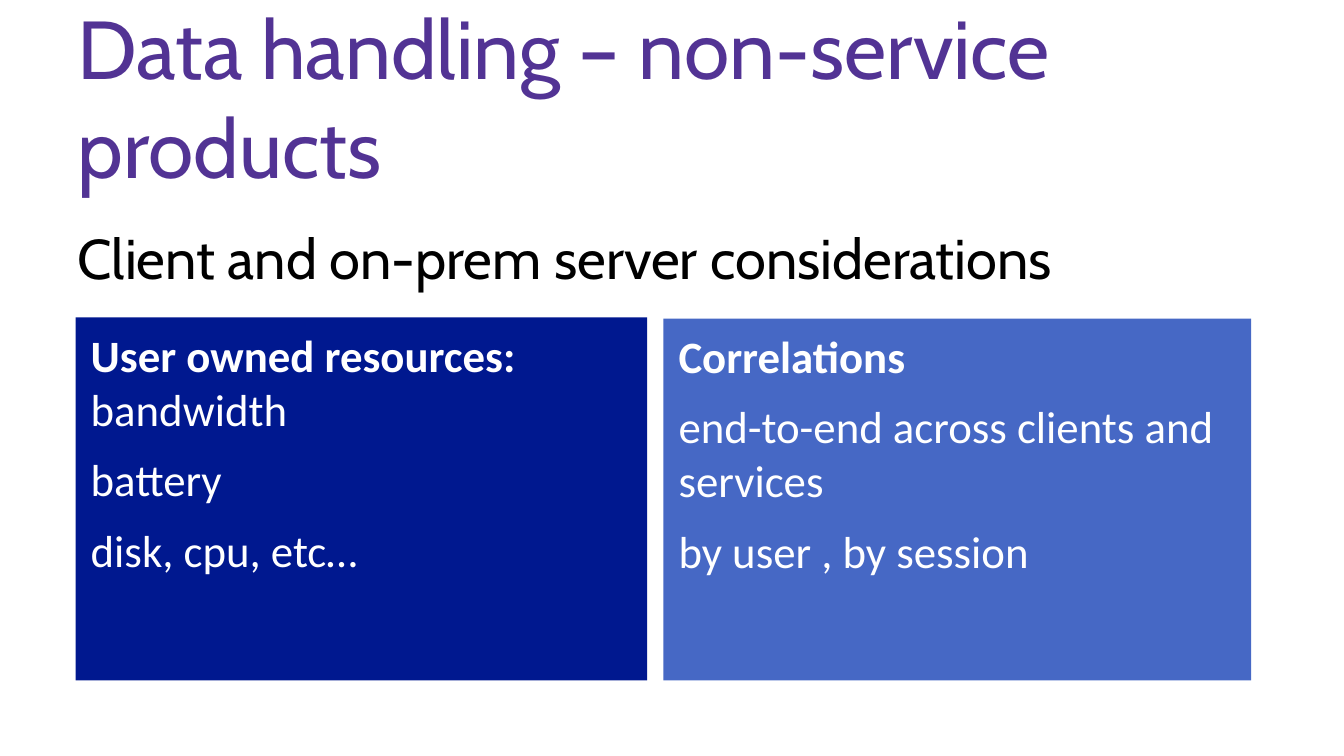
from pptx import Presentation
from pptx import util as u
from pptx.dml.color import RGBColor
from pptx.enum import shapes, text

COLORS = {"purple": "523394", "black": "000000", "white": "FFFFFF",
          "navy": "00188F", "blue": "4668C5"}


class SlideBuilder:
    """Holds the shared style and the current slide."""

    frame_format = {"word_wrap": True, "auto_size": text.MSO_AUTO_SIZE.NONE}
    heading_font = "Cabin"
    body_font = "Calibri"

    def __init__(self, presentation):
        self.slide = presentation.slides.add_slide(presentation.slide_layouts[5])

    def format_frame(self, frame, **values):
        for name, value in {**self.frame_format, **values}.items():
            setattr(frame, name, value)

    def add_runs(self, paragraph, runs, color, space_before=0, **font_values):
        """Fill a paragraph with (text, bold) runs."""
        paragraph.alignment = text.PP_ALIGN.LEFT
        paragraph.space_before = u.Pt(space_before)
        for words, bold in runs:
            run = paragraph.add_run()
            run.text = words
            for name, value in {**font_values, "bold": bold}.items():
                setattr(run.font, name, value)
            run.font.color.rgb = RGBColor.from_string(COLORS[color])

    def title(self, words, left, top, width, height):
        shape = self.slide.shapes.title
        box = {"left": left, "top": top, "width": width, "height": height}
        for name, value in box.items():
            setattr(shape, name, u.Inches(value))
        self.format_frame(shape.text_frame, vertical_anchor=text.MSO_ANCHOR.MIDDLE)
        self.add_runs(shape.text_frame.paragraphs[0], [(words, False)], "purple",
                      name=self.heading_font, size=u.Pt(58.7))

    def subtitle(self, words, *box):
        shape = self.slide.shapes.add_textbox(*map(u.Inches, box))
        self.format_frame(shape.text_frame, vertical_anchor=text.MSO_ANCHOR.TOP)
        self.add_runs(shape.text_frame.paragraphs[0], [(words, False)], "black",
                      name=self.heading_font, size=u.Pt(40))

    def panel(self, fill, paragraphs, *box):
        shape = self.slide.shapes.add_shape(
            shapes.MSO_SHAPE.RECTANGLE, *map(u.Inches, box))
        shape.shadow.inherit = False
        shape.fill.solid()
        shape.fill.fore_color.rgb = RGBColor.from_string(COLORS[fill])
        shape.line.fill.background()
        frame = shape.text_frame
        self.format_frame(frame, vertical_anchor=text.MSO_ANCHOR.TOP,
                          margin_left=u.Inches(0.15), margin_right=u.Inches(0.15),
                          margin_top=u.Inches(0.1), margin_bottom=u.Inches(0.1))
        for index, runs in enumerate(paragraphs):
            paragraph = frame.add_paragraph() if index else frame.paragraphs[0]
            self.add_runs(paragraph, runs, "white", space_before=12 if index else 0,
                          name=self.body_font, size=u.Pt(32))


def main():
    presentation = Presentation()
    presentation.slide_width = u.Inches(13.33)
    presentation.slide_height = u.Inches(7.5)
    builder = SlideBuilder(presentation)

    # Headings
    builder.title("Data handling – non-service products", 0.67, 0.33, 12, 1.25)
    builder.subtitle("Client and on-prem server considerations", 0.67, 2.17, 12, 0.85)

    # Two panels side by side
    builder.panel("navy", [
        [("User owned resources: ", True), ("bandwidth", False)],
        [("battery", False)],
        [("disk, cpu, etc…", False)],
    ], 0.75, 3.15, 5.67, 3.6)
    builder.panel("blue", [
        [("Correlations", True)],
        [("end-to-end across clients and services", False)],
        [("by user , by session", False)],
    ], 6.58, 3.16, 5.83, 3.59)

    presentation.save("out.pptx")


if __name__ == "__main__":
    main()
